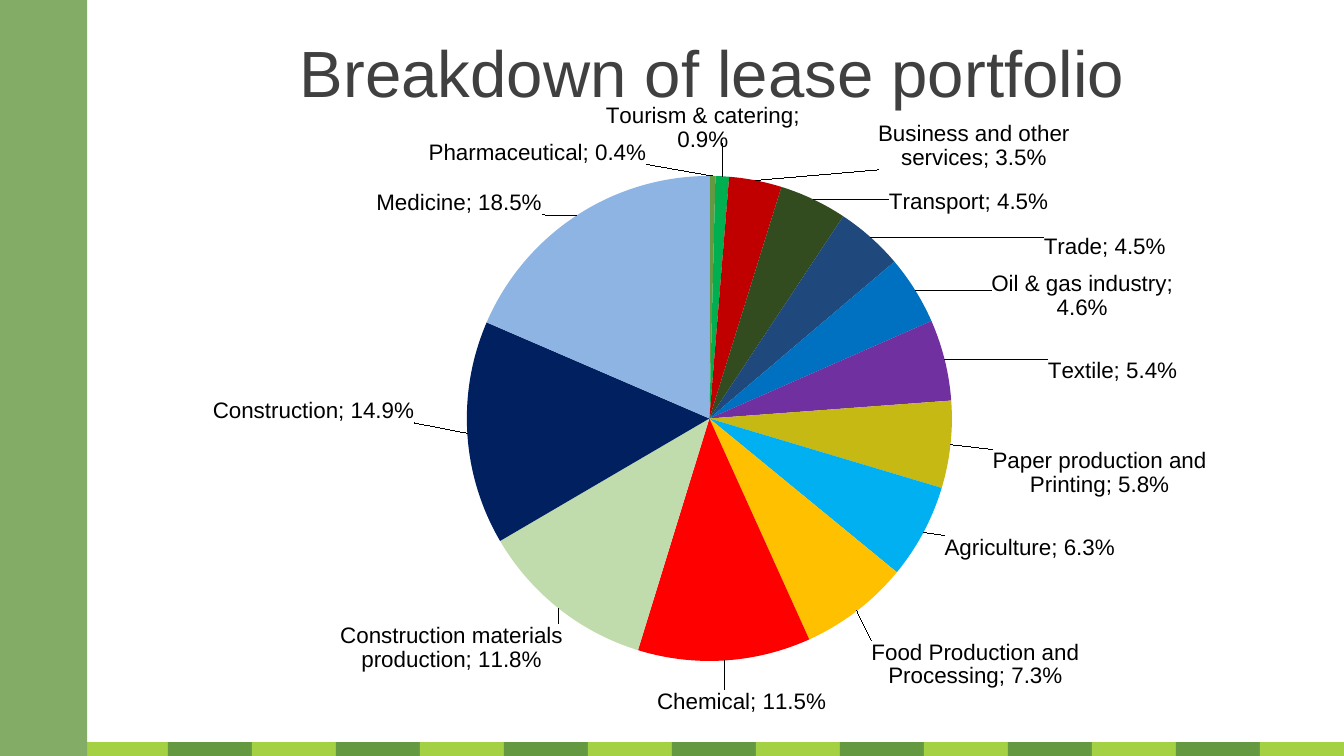
from math import cos, pi, sin

from lxml.etree import fromstring
from pptx import Presentation
from pptx.chart.data import CategoryChartData
from pptx.dml.color import RGBColor
from pptx.enum.chart import XL_CHART_TYPE
from pptx.enum.shapes import MSO_SHAPE
from pptx.enum.text import MSO_ANCHOR, PP_ALIGN
from pptx.util import Cm, Pt

BLACK = RGBColor(0, 0, 0)
GREY = RGBColor(0x40, 0x40, 0x40)
SAGE = RGBColor(0x83, 0xAD, 0x67)
GREEN = RGBColor(0x64, 0x99, 0x41)
LIME = RGBColor(0xA4, 0xD1, 0x44)
EMERALD = RGBColor(0x00, 0xB0, 0x50)
MAROON = RGBColor(0xC0, 0x00, 0x00)
FOREST = RGBColor(0x32, 0x4C, 0x20)
STEEL = RGBColor(0x1F, 0x49, 0x7D)
BLUE = RGBColor(0x00, 0x70, 0xC0)
PURPLE = RGBColor(0x70, 0x30, 0xA0)
OLIVE = RGBColor(0xC6, 0xB9, 0x14)
SKY = RGBColor(0x00, 0xB0, 0xF0)
AMBER = RGBColor(0xFF, 0xC0, 0x00)
RED = RGBColor(0xFF, 0x00, 0x00)
MINT = RGBColor(0xC0, 0xDC, 0xAD)
NAVY = RGBColor(0x00, 0x20, 0x60)
PALE = RGBColor(0x8E, 0xB4, 0xE3)

WIDTH, HEIGHT = 25.4, 14.29
CHART = (2.03, 1.96, 22.2, 12.22)
PLOT = (0.306, 0.068, 0.413, 0.838)
CENTER, RADIUS = (13.4, 7.88), 4.58
NS = "http://schemas.openxmlformats.org/drawingml/2006/chart"
NS_A = "http://schemas.openxmlformats.org/drawingml/2006/main"

# Sector, share, colour, and the slide point (cm) of the label's inner edge
SECTORS = [
    ("Pharmaceutical", 0.004, GREEN, (10.15, 3.23)),
    ("Tourism & catering", 0.009, EMERALD, (13.27, 2.83)),
    ("Business and other services", 0.035, MAROON, (16.56, 3.33)),
    ("Transport", 0.045, FOREST, (16.73, 4.14)),
    ("Trade", 0.045, STEEL, (19.62, 4.97)),
    ("Oil & gas industry", 0.046, BLUE, (18.6, 6.09)),
    ("Textile", 0.054, PURPLE, (19.65, 7.24)),
    ("Paper production and Printing", 0.058, OLIVE, (18.6, 8.45)),
    ("Agriculture", 0.063, SKY, (17.71, 10.02)),
    ("Food Production and Processing", 0.073, AMBER, (16.37, 11.96)),
    ("Chemical", 0.115, RED, (14, 12.85)),
    ("Construction materials production", 0.118, MINT, (10.73, 11.64)),
    ("Construction", 0.149, NAVY, (7.98, 7.73)),
    ("Medicine", 0.185, PALE, (10.32, 4.16)),
]


def write(frame, text, size=12, color=BLACK, font="Arial",
          align=PP_ALIGN.LEFT):
    para = frame.paragraphs[0]
    para.alignment = align
    run = para.add_run()
    run.text = text
    run.font.name, run.font.size = font, Pt(size)
    run.font.color.rgb = color


def layout(x, y, extra="", size=""):
    return (f'<c:layout xmlns:c="{NS}"><c:manualLayout>{extra}'
            f'<c:x val="{x:.4f}"/><c:y val="{y:.4f}"/>{size}'
            '</c:manualLayout></c:layout>')


def label(index, x, y):
    flags = "".join(f'<c:show{name} val="{on}"/>' for name, on in (
        ("LegendKey", 0), ("Val", 1), ("CatName", 1), ("SerName", 0),
        ("Percent", 0), ("BubbleSize", 0)))
    return fromstring(
        f'<c:dLbl xmlns:c="{NS}" xmlns:a="{NS_A}"><c:idx val="{index}"/>'
        f'{layout(x, y)}<c:numFmt formatCode="0.0%" sourceLinked="0"/>'
        '<c:txPr><a:bodyPr wrap="square"/><a:p><a:pPr><a:defRPr sz="1200">'
        f'<a:solidFill><a:srgbClr val="{BLACK}"/></a:solidFill>'
        '<a:latin typeface="Arial"/></a:defRPr></a:pPr></a:p></c:txPr>'
        f'<c:dLblPos val="bestFit"/>{flags}'
        '<c:separator>; </c:separator></c:dLbl>')


class Deck:
    def __init__(self):
        self.prs = Presentation()
        self.prs.slide_width, self.prs.slide_height = Cm(WIDTH), Cm(HEIGHT)
        self.slide = self.prs.slides.add_slide(self.prs.slide_layouts[5])

    def title(self, text, x, y, w, h):
        box = self.slide.shapes.title
        box.left, box.top, box.width, box.height = map(Cm, (x, y, w, h))
        frame = box.text_frame
        frame.word_wrap = True
        frame.vertical_anchor = MSO_ANCHOR.TOP
        frame.margin_top = Cm(0.25)
        write(frame, text, size=35, color=GREY, align=PP_ALIGN.CENTER)

    def rect(self, x, y, w, h, color):
        box = self.slide.shapes.add_shape(
            MSO_SHAPE.RECTANGLE, *map(Cm, (x, y, w, h)))
        box.shadow.inherit = False
        box.fill.solid()
        box.fill.fore_color.rgb = color
        box.line.fill.background()

    def pie(self, sectors):
        data = CategoryChartData(number_format="0.0%")
        data.categories = [row[0] for row in sectors]
        data.add_series("Series 1", [row[1] for row in sectors])
        chart = self.slide.shapes.add_chart(
            XL_CHART_TYPE.PIE, *map(Cm, CHART), data).chart
        chart.has_title = chart.has_legend = False
        chart.font.name, chart.font.size = "Arial", Pt(12)
        chart.font.color.rgb = BLACK
        plot = chart.plots[0]
        plot.vary_by_categories = True
        self.place(chart)

        # Labels for the whole series
        series = plot.series[0]
        labels = series.data_labels
        labels.number_format = "0.0%"
        labels.number_format_is_linked = False
        labels.show_value = labels.show_category_name = True
        group = series._element.find(f"{{{NS}}}dLbls")
        lines = group.find(f"{{{NS}}}showLeaderLines")
        if lines is None:
            lines = fromstring(f'<c:showLeaderLines xmlns:c="{NS}"/>')
            group.append(lines)
        lines.set("val", "1")
        lines.addprevious(
            fromstring(f'<c:separator xmlns:c="{NS}">; </c:separator>'))

        # Slice colours, and label offsets from the middle of each arc
        total, done = sum(row[1] for row in sectors), 0
        for i, (name, share, color, spot) in enumerate(sectors):
            fill = series.points[i].format.fill
            fill.solid()
            fill.fore_color.rgb = color
            turn = 2 * pi * (done + share / 2) / total
            done += share
            x = (spot[0] - CENTER[0] - RADIUS * sin(turn)) / CHART[2]
            y = (spot[1] - CENTER[1] + RADIUS * cos(turn)) / CHART[3]
            group.insert(i, label(i, x, y))

    def place(self, chart):
        x, y, w, h = PLOT
        area = chart._chartSpace.find(f".//{{{NS}}}plotArea")
        for old in area.findall(f"{{{NS}}}layout"):
            area.remove(old)
        extra = ('<c:layoutTarget val="inner"/><c:xMode val="edge"/>'
                 '<c:yMode val="edge"/>')
        size = f'<c:w val="{w}"/><c:h val="{h}"/>'
        area.insert(0, fromstring(layout(x, y, extra, size)))


def main():
    deck = Deck()
    # Bottom strip and side bar
    step = WIDTH / 16
    for i in range(16):
        deck.rect(i * step, 14.03, step, 0.26, LIME if i % 2 else GREEN)
    deck.rect(0, 0, 1.65, HEIGHT, SAGE)
    # Title and chart
    deck.title("Breakdown of lease portfolio", 5.11, 0.36, 16.71, 2.24)
    deck.pie(SECTORS)
    deck.prs.save("out.pptx")


if __name__ == "__main__":
    main()
